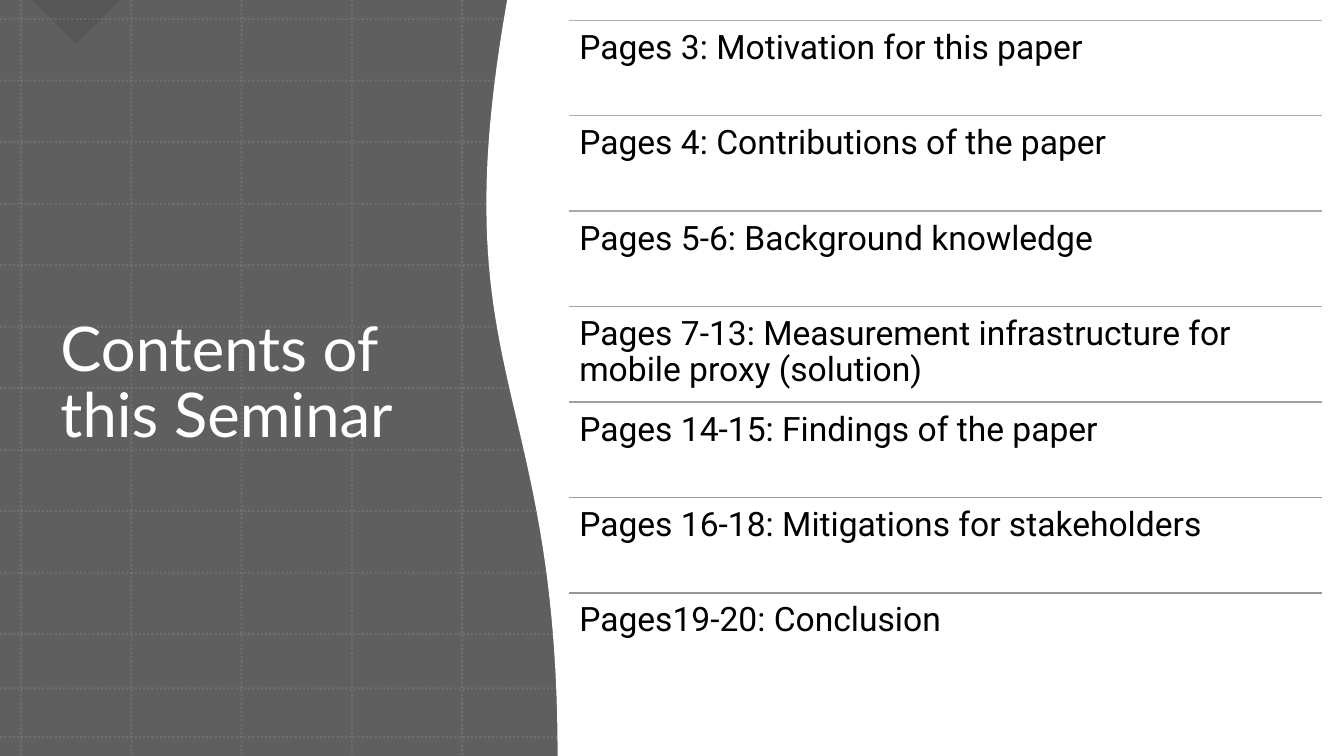
from lxml.etree import SubElement
from pptx import Presentation
from pptx.dml.color import RGBColor
from pptx.enum.dml import MSO_LINE
from pptx.enum.shapes import MSO_CONNECTOR, MSO_SHAPE
from pptx.enum.text import MSO_ANCHOR, MSO_AUTO_SIZE, PP_ALIGN
from pptx.oxml.ns import qn
from pptx.util import Cm, Pt

SLIDE_W, SLIDE_H = 33.87, 19.05
COLORS = {
    "panel": "5F5F5F",
    "grid": "B2B2B2",
    "corner": "303030",
    "sheet": "FFFFFF",
    "title": "FFFFFF",
    "entry": "000000",
    "first_divider": "B2B2B2",
    "last_divider": "969696",
}
TITLE = "Contents of this Seminar"
ENTRIES = [
    "Pages 3: Motivation for this paper",
    "Pages 4: Contributions of the paper",
    "Pages 5-6: Background knowledge",
    "Pages 7-13: Measurement infrastructure for mobile proxy (solution)",
    "Pages 14-15: Findings of the paper",
    "Pages 16-18: Mitigations for stakeholders",
    "Pages19-20: Conclusion",
]


def color(name):
    return RGBColor.from_string(COLORS[name])


def set_opacity(shape, percent):
    for rgb in shape.element.spPr.iter(qn("a:srgbClr")):
        SubElement(rgb, qn("a:alpha"), val=str(percent * 1000))


def add_filled(shapes, kind, left, top, width, height, fill):
    shape = shapes.add_shape(kind, Cm(left), Cm(top), Cm(width), Cm(height))
    shape.shadow.inherit = False
    shape.fill.solid()
    shape.fill.fore_color.rgb = color(fill)
    shape.line.fill.background()
    return shape


def add_rule(shapes, x1, y1, x2, y2, rgb, points):
    rule = shapes.add_connector(
        MSO_CONNECTOR.STRAIGHT, Cm(x1), Cm(y1), Cm(x2), Cm(y2))
    rule.line.color.rgb = rgb
    rule.line.width = Pt(points)
    SubElement(rule.element.spPr, qn("a:effectLst"))
    return rule


def add_backdrop(shapes, left, top, width, height):
    """Grey panel with a corner mark and a faint dotted grid."""
    add_filled(shapes, MSO_SHAPE.RECTANGLE, left, top, width, height, "panel")

    side = 1.57
    corner = add_filled(shapes, MSO_SHAPE.RIGHT_TRIANGLE,
                        left + 1.14, top - side / 2, side, side, "corner")
    corner.rotation = 315
    set_opacity(corner, 17)

    columns = [left + 0.53 + 2.78 * i for i in range(5)]
    rows = [top + 0.48 + 1.55 * i for i in range(11)] + [top + 17.35, top + 18.57]
    grid = [(x, top, x, top + height) for x in columns]
    grid += [(left, y, left + width, y) for y in rows]
    for ends in grid:
        rule = add_rule(shapes, *ends, color("grid"), 1.5)
        rule.line.dash_style = MSO_LINE.ROUND_DOT
        set_opacity(rule, 20)


def add_title(shapes, left, top, width, height):
    title = shapes.title
    shapes.element.append(title.element)  # bring in front of the backdrop
    title.left, title.top = Cm(left), Cm(top)
    title.width, title.height = Cm(width), Cm(height)
    frame = title.text_frame
    frame.text = TITLE
    frame.word_wrap = True
    frame.auto_size = MSO_AUTO_SIZE.NONE
    frame.vertical_anchor = MSO_ANCHOR.MIDDLE
    paragraph = frame.paragraphs[0]
    paragraph.alignment = PP_ALIGN.LEFT
    paragraph.line_spacing = 0.9
    paragraph.font.name = "Lato"
    paragraph.font.size = Pt(44)
    paragraph.font.color.rgb = color("title")


def bezier(p0, p1, p2, p3, steps=48):
    for i in range(steps + 1):
        t = i / steps
        yield tuple((1 - t) ** 3 * a + 3 * (1 - t) ** 2 * t * b
                    + 3 * (1 - t) * t ** 2 * c + t ** 3 * d
                    for a, b, c, d in zip(p0, p1, p2, p3))


def add_sheet(shapes, left, top, width, height):
    """White area whose left edge is an S-shaped curve."""
    bottom, right = top + height, left + width
    edge = bezier((left + 2.97, bottom), (left + 2.97, top + 9.55),
                  (left, top + 9.5), (left + 1.7, top))
    outline = [(Cm(x), Cm(y)) for x, y in edge]
    outline += [(Cm(right), Cm(top)), (Cm(right), Cm(bottom))]
    builder = shapes.build_freeform(*outline[0])
    builder.add_line_segments(outline[1:], close=True)
    sheet = builder.convert_to_shape()
    sheet.shadow.inherit = False
    sheet.fill.solid()
    sheet.fill.fore_color.rgb = color("sheet")
    sheet.line.color.rgb = color("sheet")
    sheet.line.width = Pt(1)


def add_contents(shapes, left, top, width, height):
    """Entries in equal rows, each under a divider that darkens downwards."""
    row_height = height / len(ENTRIES)
    first, last = color("first_divider"), color("last_divider")
    for i, entry in enumerate(ENTRIES):
        y = top + i * row_height
        share = i / (len(ENTRIES) - 1)
        shade = RGBColor(*(round(a + (b - a) * share) for a, b in zip(first, last)))
        add_rule(shapes, left, y, left + width, y, shade, 1)

        box = shapes.add_textbox(Cm(left), Cm(y), Cm(width), Cm(row_height))
        frame = box.text_frame
        frame.word_wrap = True
        frame.margin_left = frame.margin_right = Cm(0.25)
        frame.margin_top = frame.margin_bottom = Cm(0.25)
        paragraph = frame.paragraphs[0]
        paragraph.text = entry
        paragraph.line_spacing = 0.9
        paragraph.font.name = "Roboto"
        paragraph.font.size = Pt(24)
        paragraph.font.color.rgb = color("entry")


def main():
    prs = Presentation()
    prs.slide_width, prs.slide_height = Cm(SLIDE_W), Cm(SLIDE_H)
    shapes = prs.slides.add_slide(prs.slide_layouts[5]).shapes
    add_backdrop(shapes, 0, 0, SLIDE_W, SLIDE_H)
    add_title(shapes, 1.27, 2.01, 10.36, 15.37)
    add_sheet(shapes, 11.1, 0, SLIDE_W - 11.1, SLIDE_H)
    add_contents(shapes, 14.35, 0.51, 18.97, 16.84)
    prs.save("out.pptx")


if __name__ == "__main__":
    main()
